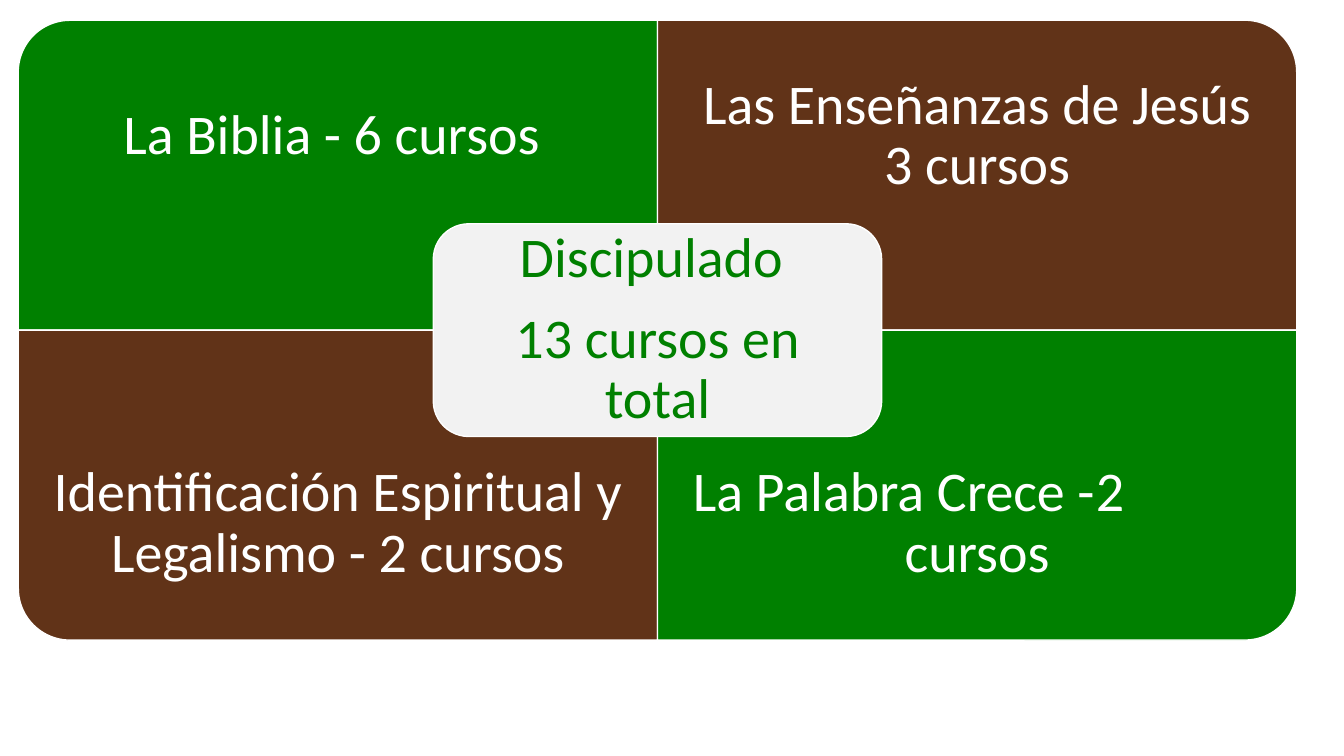
from dataclasses import dataclass

from lxml import etree
from pptx import Presentation
from pptx import util as u
from pptx.dml.color import RGBColor
from pptx.enum import shapes, text
from pptx.oxml.ns import qn


@dataclass(frozen=True)
class Theme:
    green: str = "008000"
    brown: str = "613318"
    pale: str = "F2F2F2"
    white: str = "FFFFFF"
    font: str = "Calibri"
    size: int = 40
    spacing: float = 0.9
    space_before: int = 14
    corner: float = 0.167
    outline: int = 1


class Painter:
    def __init__(self, page, theme):
        self.page = page
        self.theme = theme

    def panel(self, kind, left, top, width, height, fill, rotation=0):
        if rotation % 180:
            left, top = left + (width - height) / 2, top + (height - width) / 2
            width, height = height, width
        shape = self.page.shapes.add_shape(
            kind, u.Cm(left), u.Cm(top), u.Cm(width), u.Cm(height))
        shape.rotation = rotation
        shape.adjustments[0] = self.theme.corner
        shape.shadow.inherit = False
        shape.fill.solid()
        shape.fill.fore_color.rgb = RGBColor.from_string(fill)
        shape.line.color.rgb = RGBColor.from_string(self.theme.white)
        shape.line.width = u.Pt(self.theme.outline)

    def label(self, lines, left, top, width, height, inset, color, gap=0):
        box = self.page.shapes.add_textbox(
            u.Cm(left), u.Cm(top), u.Cm(width), u.Cm(height))
        frame = box.text_frame
        frame.word_wrap = True
        frame.vertical_anchor = text.MSO_ANCHOR.MIDDLE
        frame.margin_left = frame.margin_right = u.Cm(inset)
        frame.margin_top = frame.margin_bottom = u.Cm(inset)
        for index, line in enumerate(lines):
            para = frame.paragraphs[0] if index == 0 else frame.add_paragraph()
            para.text = line
            para.alignment = text.PP_ALIGN.CENTER
            if "\t" in line:
                self.right_tab(para, width - 2 * inset - 0.1)
            para.line_spacing = self.theme.spacing
            para.space_before = u.Pt(gap if index else 0)
            para.font.name = self.theme.font
            para.font.size = u.Pt(self.theme.size)
            para.font.color.rgb = RGBColor.from_string(color)

    def right_tab(self, para, position):
        para.alignment = text.PP_ALIGN.LEFT
        properties = para._p.get_or_add_pPr()
        properties.set("marL", str(u.Cm(0.1)))
        properties.set("indent", "0")
        tabs = etree.SubElement(properties, qn("a:tabLst"))
        etree.SubElement(tabs, qn("a:tab"), pos=str(u.Cm(position)), algn="r")


def main():
    deck = Presentation()
    deck.slide_width, deck.slide_height = u.Cm(33.87), u.Cm(19.05)
    theme = Theme()
    painter = Painter(deck.slides.add_slide(deck.slide_layouts[6]), theme)

    left, top, width, height = 0.46, 0.51, 16.11, 7.81
    label_height = height * 0.75
    quadrants = [
        (0, 0, 270, theme.green, ["La Biblia - 6 cursos "]),
        (1, 0, 0, theme.brown, ["Las Enseñanzas de Jesús 3 cursos"]),
        (0, 1, 180, theme.brown,
         ["Identificación Espiritual y Legalismo - 2 cursos"]),
        (1, 1, 90, theme.green, ["La Palabra Crece -\t2", "cursos"]),
    ]
    for column, row, rotation, fill, lines in quadrants:
        x, y = left + column * width, top + row * height
        painter.panel(shapes.MSO_SHAPE.ROUND_1_RECTANGLE,
                      x, y, width, height, fill, rotation)
        painter.label(lines, x, y + row * (height - label_height),
                      width, label_height, 0.79, theme.white)

    hub_width, hub_height, hub_pad = 11.3, 5.36, 0.27
    hub_left = left + width - hub_width / 2
    hub_top = top + height - hub_height / 2
    painter.panel(shapes.MSO_SHAPE.ROUNDED_RECTANGLE,
                  hub_left, hub_top, hub_width, hub_height, theme.pale)
    painter.label(["Discipulado ", "13 cursos en total"],
                  hub_left + hub_pad, hub_top + hub_pad,
                  hub_width - 2 * hub_pad, hub_height - 2 * hub_pad,
                  0.43, theme.green, theme.space_before)

    deck.save("out.pptx")


if __name__ == "__main__":
    main()
